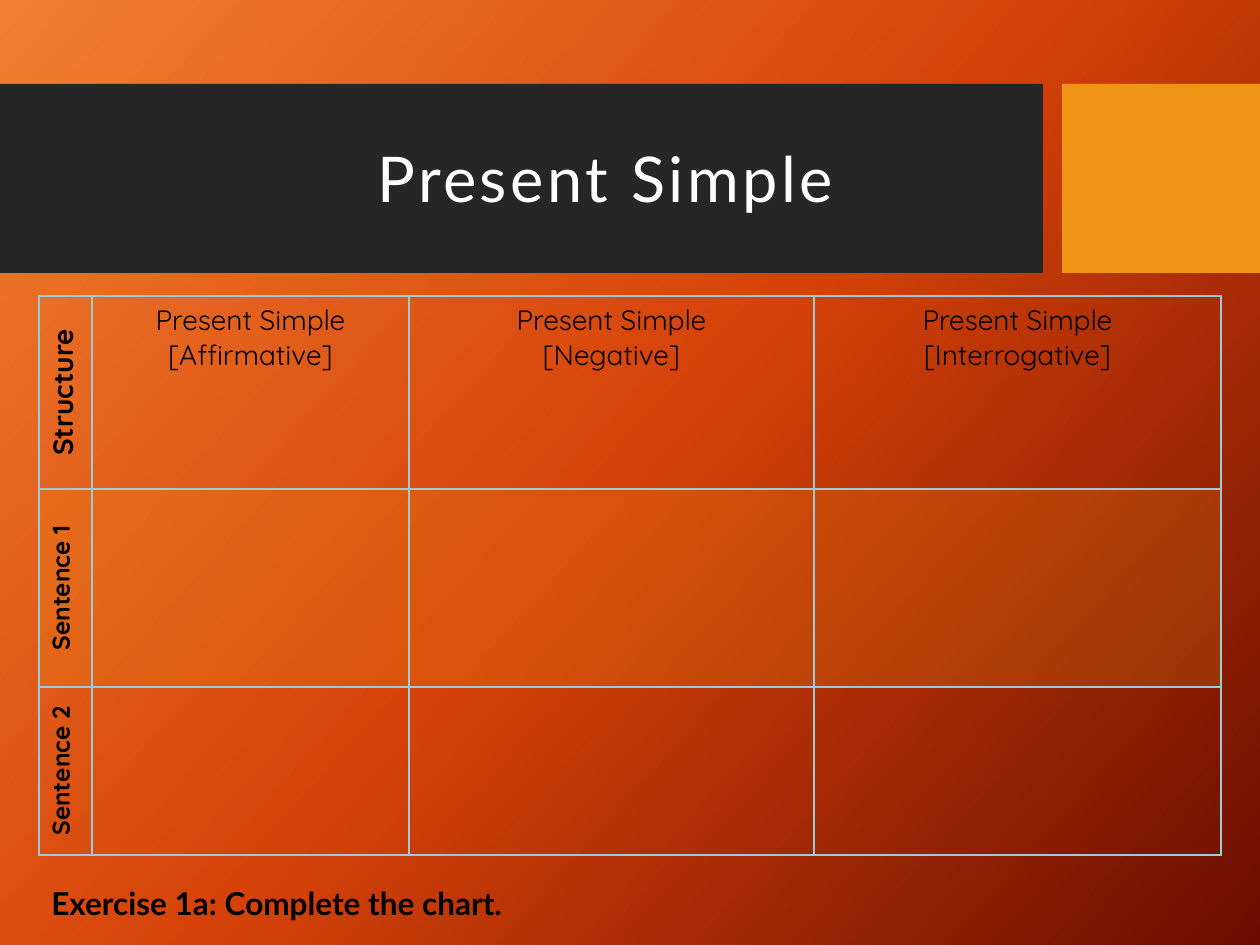
from copy import deepcopy
from dataclasses import dataclass

from lxml.etree import SubElement
from pptx import Presentation
from pptx.dml.color import RGBColor
from pptx.enum.shapes import MSO_SHAPE
from pptx.enum.text import MSO_ANCHOR, MSO_AUTO_SIZE, PP_ALIGN
from pptx.oxml.ns import qn
from pptx.util import Emu, Pt

CHARCOAL = RGBColor(0x26, 0x26, 0x26)
AMBER = RGBColor(0xF0, 0x94, 0x15)
BLACK = RGBColor(0, 0, 0)
WHITE = RGBColor(0xFF, 0xFF, 0xFF)
BORDER = RGBColor(0x9C, 0xCA, 0xD9)
GRADIENT = (RGBColor(0xF1, 0x80, 0x31), RGBColor(0xD5, 0x42, 0x09), RGBColor(0x6A, 0x0D, 0x00))

COLUMNS = (53, 317, 405, 407)
ROWS = (193, 198, 168)
FORMS = ("Affirmative", "Negative", "Interrogative")


@dataclass(frozen=True)
class Area:
    left: int
    top: int
    width: int
    height: int

    def emu(self) -> tuple:
        return tuple(px(n) for n in (self.left, self.top, self.width, self.height))


@dataclass(frozen=True)
class Band:
    area: Area
    color: RGBColor


@dataclass(frozen=True)
class RowLabel:
    text: str
    size: int


BANDS = (
    Band(Area(0, 84, 1043, 189), CHARCOAL),
    Band(Area(1062, 84, 198, 189), AMBER),
)
LABELS = (RowLabel("Structure", 16), RowLabel("Sentence 1", 14), RowLabel("Sentence 2", 14))


def px(length: int) -> Emu:
    return Emu(round(length * 914400 / 126))


def write(frame, text: str, *, size: int, font: str, color=BLACK, bold=False,
          align=PP_ALIGN.CENTER, tracking=0, line_spacing=None, after=None) -> None:
    """Fill a text frame, one paragraph for each line of the text."""
    for index, line in enumerate(text.split("\n")):
        para = frame.add_paragraph() if index else frame.paragraphs[0]
        para.alignment = align
        para.line_spacing = line_spacing
        para.space_after = after
        span = para.add_run()
        span.text = line
        span.font.size = Pt(size)
        span.font.name = font
        span.font.bold = bold
        span.font.color.rgb = color
        if tracking:
            span.font._element.set("spc", str(tracking * 100))


def paint_background(page) -> None:
    fill = page.background.fill
    fill.gradient()
    fill.gradient_angle = 360 - 42
    stop_list = page.element.find(".//" + qn("a:gsLst"))
    stop_list.append(deepcopy(stop_list[-1]))
    for index, (stop, color) in enumerate(zip(fill.gradient_stops, GRADIENT)):
        stop.position = index / 2
        stop.color.rgb = color


def draw_band(page, band: Band) -> None:
    box = page.shapes.add_shape(MSO_SHAPE.RECTANGLE, *band.area.emu())
    box.shadow.inherit = False
    box.fill.solid()
    box.fill.fore_color.rgb = band.color
    box.line.fill.background()


def style_cell(cell, tinted: bool) -> None:
    if tinted:
        cell.fill.solid()
        cell.fill.fore_color.rgb = AMBER
    else:
        cell.fill.background()
    properties = cell._tc.get_or_add_tcPr()
    if tinted:
        SubElement(properties.find(".//" + qn("a:srgbClr")), qn("a:alpha"), val="20000")
    # Borders come before the fill in the cell properties
    for index, side in enumerate(("a:lnL", "a:lnR", "a:lnT", "a:lnB")):
        line = SubElement(properties, qn(side), w=str(Pt(1)))
        SubElement(SubElement(line, qn("a:solidFill")), qn("a:srgbClr"), val=str(BORDER))
        properties.insert(index, line)


def draw_chart_table(page) -> None:
    area = Area(39, 296, sum(COLUMNS), sum(ROWS))
    table = page.shapes.add_table(len(ROWS), len(COLUMNS), *area.emu()).table
    table.first_row = table.horz_banding = False
    for column, width in zip(table.columns, COLUMNS):
        column.width = px(width)
    for index, (row, height) in enumerate(zip(table.rows, ROWS)):
        row.height = px(height)
        for cell in row.cells:
            style_cell(cell, tinted=index == 1)

    # Upright row labels
    for index, label in enumerate(LABELS):
        cell = table.cell(index, 0)
        cell._tc.get_or_add_tcPr().set("vert", "vert270")
        write(cell.text_frame, label.text, size=label.size, font="Quicksand", bold=True)

    # Column headings
    for index, form in enumerate(FORMS, start=1):
        write(table.cell(0, index).text_frame, f"Present Simple\n[{form}]",
              size=16, font="Quicksand")


def draw_instruction(page) -> None:
    box = page.shapes.add_textbox(*Area(39, 878, 1182, 50).emu())
    box.text_frame.word_wrap = True
    box.text_frame.auto_size = MSO_AUTO_SIZE.SHAPE_TO_FIT_TEXT
    write(box.text_frame, "Exercise 1a: Complete the chart.", size=18, font="Lato",
          bold=True, align=PP_ALIGN.JUSTIFY)


def place_title(page) -> None:
    title = page.shapes.title
    title.left, title.top, title.width, title.height = Area(29, 78, 1153, 208).emu()
    frame = title.text_frame
    frame.auto_size = MSO_AUTO_SIZE.NONE
    frame.vertical_anchor = MSO_ANCHOR.MIDDLE
    write(frame, "Present Simple", size=36, font="Lato", color=WHITE,
          tracking=2, line_spacing=0.9, after=Pt(6))
    # Bring the title in front of the bands
    page.shapes._spTree.append(title._element)


def main() -> None:
    deck = Presentation()
    deck.slide_width, deck.slide_height = px(1260), px(945)
    page = deck.slides.add_slide(deck.slide_layouts[5])
    paint_background(page)
    for band in BANDS:
        draw_band(page, band)
    draw_chart_table(page)
    draw_instruction(page)
    place_title(page)
    deck.save("out.pptx")


if __name__ == "__main__":
    main()
